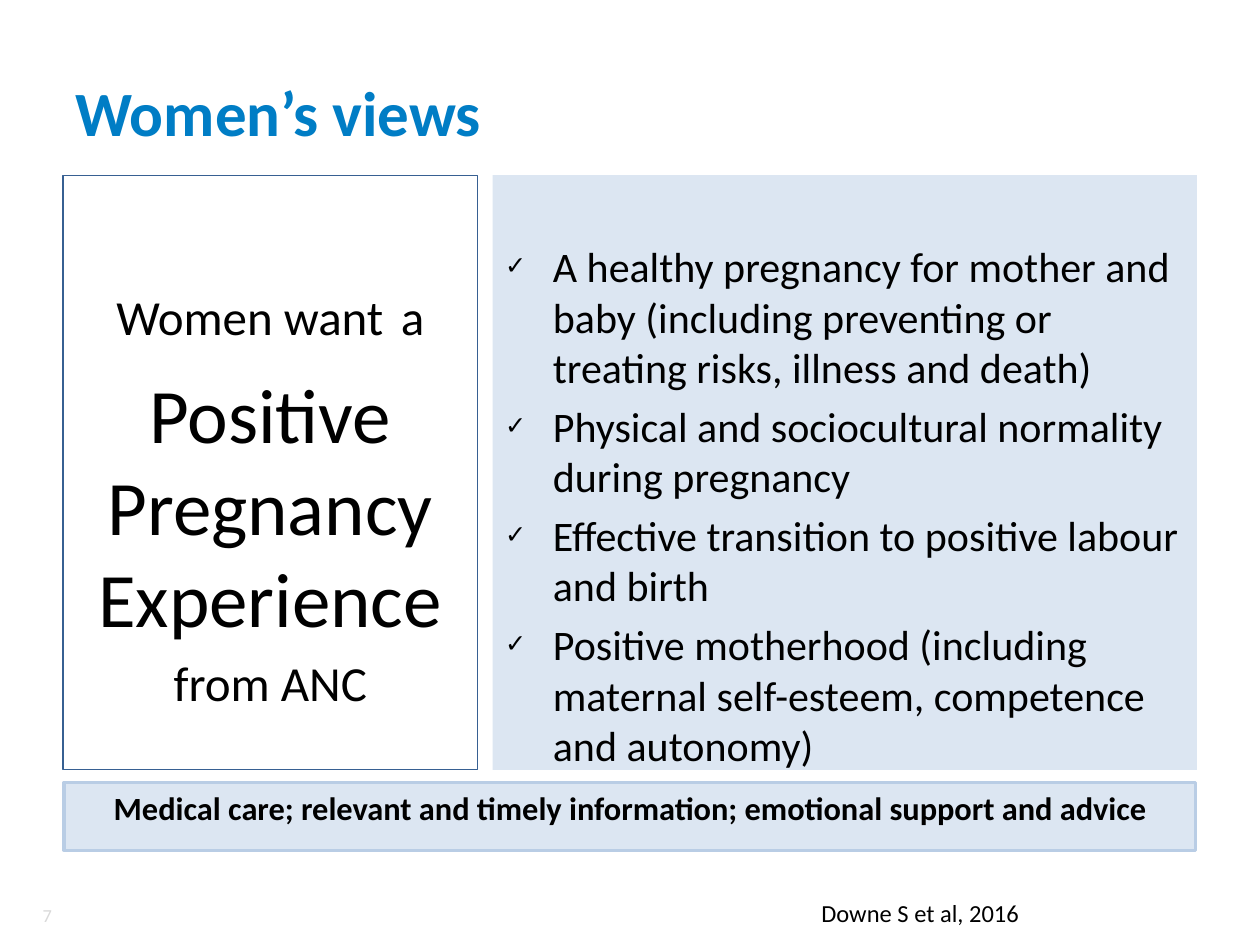
from dataclasses import dataclass

from lxml import etree
from pptx import Presentation
from pptx.dml.color import RGBColor
from pptx.enum.shapes import MSO_SHAPE
from pptx.enum.text import MSO_ANCHOR, PP_ALIGN
from pptx.oxml.ns import qn
from pptx.util import Inches, Pt

LEFT, CENTER, RIGHT = PP_ALIGN.LEFT, PP_ALIGN.CENTER, PP_ALIGN.RIGHT
TOP, MIDDLE, BOTTOM = MSO_ANCHOR.TOP, MSO_ANCHOR.MIDDLE, MSO_ANCHOR.BOTTOM
RECTANGLE = MSO_SHAPE.RECTANGLE

COLORS = {
    "text": "000000",
    "title": "007DC5",
    "panel": "DCE6F2",
    "panel_line": "B9CDE5",
    "frame": "376092",
    "number": "D9D9D9",
}


def color(name):
    return RGBColor.from_string(COLORS[name])


def add_check_bullet(para, indent=0.38):
    """Give the paragraph a small check mark with a hanging indent."""
    props = para._p.get_or_add_pPr()
    props.set("marL", str(Inches(indent)))
    props.set("indent", str(-Inches(indent)))
    bullet_color = etree.SubElement(props, qn("a:buClr"))
    etree.SubElement(bullet_color, qn("a:srgbClr"), val=COLORS["text"])
    etree.SubElement(props, qn("a:buSzPct"), val="60000")
    etree.SubElement(props, qn("a:buFont"), typeface="Calibri")
    etree.SubElement(props, qn("a:buChar"), char="✓")


def add_span(para, text, size, font="Calibri", fill="text", bold=False):
    span = para.add_run()
    span.text = text
    span.font.name = font
    span.font.size = Pt(size)
    span.font.bold = bold
    span.font.color.rgb = color(fill)


@dataclass
class SlideBuilder:
    page: object
    font: str = "Calibri"

    def rectangle(self, left, top, width, height, fill=None, line=None, line_width=0.75):
        box = self.page.shapes.add_shape(
            RECTANGLE, Inches(left), Inches(top), Inches(width), Inches(height))
        box.shadow.inherit = False
        if fill:
            box.fill.solid()
            box.fill.fore_color.rgb = color(fill)
        else:
            box.fill.background()
        if line:
            box.line.color.rgb = color(line)
            box.line.width = Pt(line_width)
        else:
            box.line.fill.background()
        return box

    def text_box(self, left, top, width, height):
        return self.page.shapes.add_textbox(
            Inches(left), Inches(top), Inches(width), Inches(height))

    def add_text(self, box, paragraphs, align=LEFT, anchor=TOP, inset_top=0.05,
                 wrap=True, checked=False, **style):
        """Fill a box; each paragraph is a list of (text, size) spans."""
        frame = box.text_frame
        frame.word_wrap = wrap
        frame.vertical_anchor = anchor
        frame.margin_top = Inches(inset_top)
        for index, spans in enumerate(paragraphs):
            para = frame.add_paragraph() if index else frame.paragraphs[0]
            para.alignment = align
            if index:
                para.space_before = Pt(0.2 * max(size for _, size in spans))
            if checked:
                add_check_bullet(para)
            for text, size in spans:
                add_span(para, text, size, font=self.font, **style)


def main():
    deck = Presentation()
    deck.slide_width, deck.slide_height = Inches(10), Inches(7.5)
    builder = SlideBuilder(deck.slides.add_slide(deck.slide_layouts[6]))

    number = builder.text_box(0.12, 7.14, 0.39, 0.24)
    builder.add_text(number, [[("7", 10.5)]], align=RIGHT, anchor=MIDDLE, fill="number")

    title = builder.text_box(0.5, 0.3, 9, 0.93)
    builder.add_text(title, [[("Women’s views", 36)]], anchor=BOTTOM, fill="title", bold=True)

    wishes = [
        "A healthy pregnancy for mother and baby (including preventing or "
        "treating risks, illness and death)",
        "Physical and sociocultural normality during pregnancy",
        "Effective transition to positive labour and birth",
        "Positive motherhood (including maternal self-esteem, competence and autonomy)",
    ]
    wish_panel = builder.rectangle(3.91, 1.39, 5.59, 4.72, fill="panel")
    builder.add_text(wish_panel, [[(wish, 24)] for wish in wishes],
                     inset_top=0.52, checked=True)

    statement = builder.rectangle(0.5, 1.39, 3.29, 4.72, line="frame")
    builder.add_text(statement, [
        [("Women want", 28), (" ", 44), ("a", 28)],
        [("Positive Pregnancy Experience", 44)],
        [("from ANC", 28)],
    ], align=CENTER, inset_top=0.66)

    summary = builder.rectangle(0.51, 6.21, 8.98, 0.54, fill="panel",
                                line="panel_line", line_width=2)
    builder.add_text(summary, [[(
        "Medical care; relevant and timely information; emotional support and advice",
        18.5)]], align=CENTER, bold=True)

    citation = builder.text_box(6.42, 7.08, 1.78, 0.34)
    builder.add_text(citation, [[("Downe S et al, 2016", 14)]], wrap=False)

    deck.save("out.pptx")


if __name__ == "__main__":
    main()
